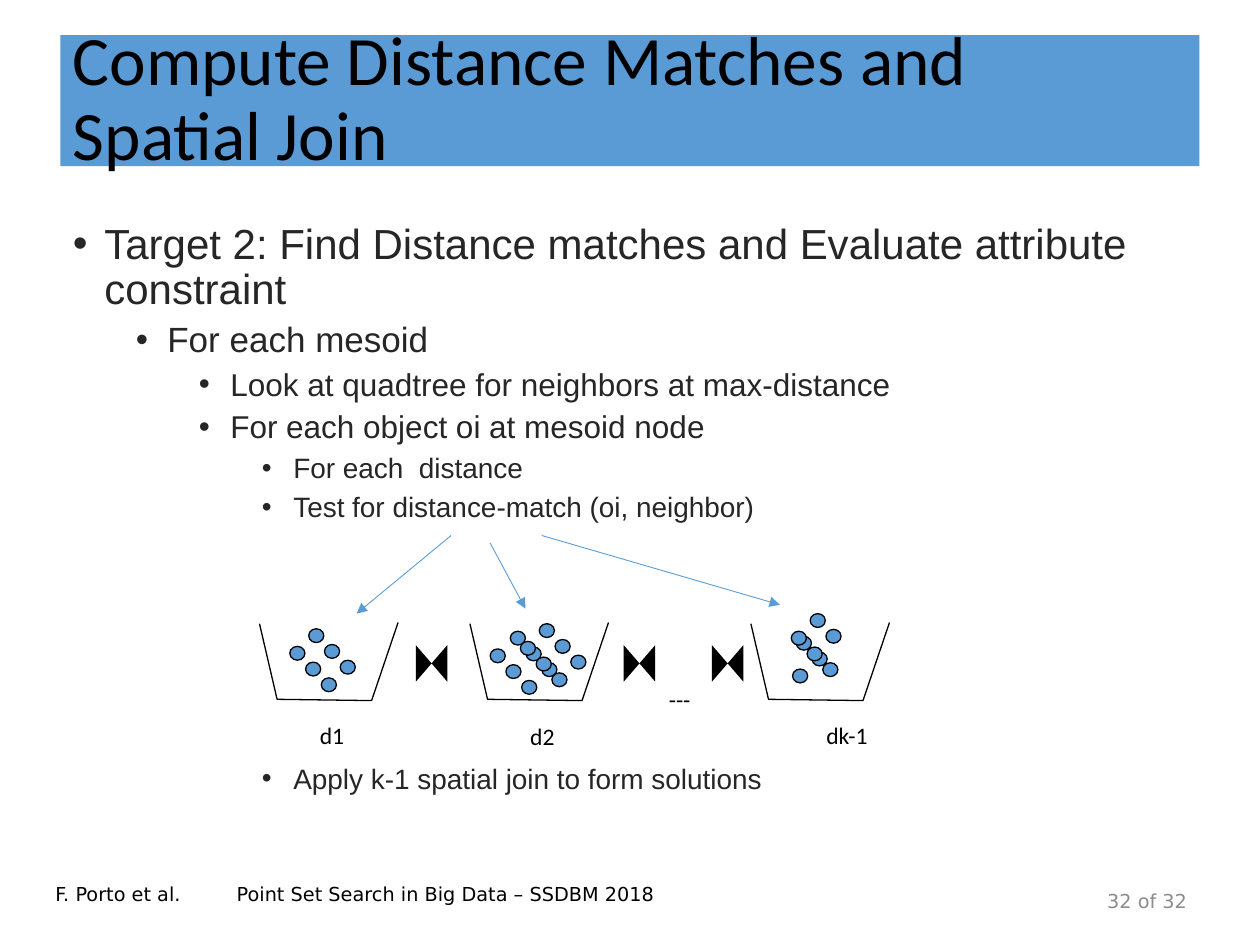
from dataclasses import dataclass

from lxml.etree import SubElement
from pptx import Presentation
from pptx.dml.color import RGBColor
from pptx.enum.shapes import MSO_CONNECTOR, MSO_SHAPE
from pptx.enum.text import MSO_ANCHOR, PP_ALIGN
from pptx.oxml.ns import qn
from pptx.util import Inches, Pt

CELL = 0.1  # inches; the slide is a grid of 100 columns by 75 rows


@dataclass(frozen=True)
class Theme:
    blue: RGBColor = RGBColor(0x5B, 0x9B, 0xD5)
    black: RGBColor = RGBColor(0, 0, 0)
    body: RGBColor = RGBColor(0x26, 0x26, 0x26)
    gray: RGBColor = RGBColor(0x8C, 0x8C, 0x8C)
    heading_font: str = "Calibri"
    body_font: str = "Arial"
    footer_font: str = "DejaVu Sans"
    title_size: float = 39.6
    level_sizes: tuple = (24, 20, 18, 16)
    label_size: float = 13.5
    footer_size: float = 11
    outline: float = 0.75
    arrow_line: float = 0.5


def grid(*cells):
    return [Inches(cell * CELL) for cell in cells]


class SlideBuilder:
    def __init__(self, presentation, theme):
        self.theme = theme
        self.slide = presentation.slides.add_slide(presentation.slide_layouts[6])
        self.shapes = self.slide.shapes

    def style_text(self, paragraph, size, font, color):
        paragraph.font.size = Pt(size)
        paragraph.font.name = font
        paragraph.font.color.rgb = color

    def preset(self, kind, box, fill, outlined=False):
        shape = self.shapes.add_shape(kind, *grid(*box))
        shape.shadow.inherit = False
        shape.fill.solid()
        shape.fill.fore_color.rgb = fill
        if outlined:
            shape.line.color.rgb = self.theme.black
            shape.line.width = Pt(self.theme.outline)
        else:
            shape.line.fill.background()
        return shape

    def title(self, text, box):
        frame = self.preset(MSO_SHAPE.RECTANGLE, box, self.theme.blue).text_frame
        frame.text = text
        frame.word_wrap = True
        frame.vertical_anchor = MSO_ANCHOR.MIDDLE
        paragraph = frame.paragraphs[0]
        paragraph.alignment = PP_ALIGN.LEFT
        paragraph.line_spacing = 0.9
        self.style_text(paragraph, self.theme.title_size,
                        self.theme.heading_font, self.theme.black)

    def bullets(self, items, box):
        """Add an outline from (level, space before in points, text) items."""
        frame = self.shapes.add_textbox(*grid(*box)).text_frame
        frame.word_wrap = True
        for index, (level, space, text) in enumerate(items):
            paragraph = frame.add_paragraph() if index else frame.paragraphs[0]
            paragraph.text = text
            paragraph.level = level
            paragraph.line_spacing = 0.9
            paragraph.space_before = Pt(space)
            self.style_text(paragraph, self.theme.level_sizes[level],
                            self.theme.body_font, self.theme.body)
            properties = paragraph._p.get_or_add_pPr()
            properties.set("marL", str(Inches(0.25 + 0.5 * level)))
            properties.set("indent", str(Inches(-0.25)))
            bullet_font = SubElement(properties, qn("a:buFont"))
            bullet_font.set("typeface", self.theme.body_font)
            SubElement(properties, qn("a:buChar")).set("char", "•")
            # the schema wants the default run properties after the bullet
            properties.append(properties.find(qn("a:defRPr")))

    def text(self, text, box, size, font, color, wrap=False,
             alignment=PP_ALIGN.LEFT, anchor=MSO_ANCHOR.TOP):
        frame = self.shapes.add_textbox(*grid(*box)).text_frame
        frame.text = text
        frame.word_wrap = wrap
        frame.vertical_anchor = anchor
        frame.paragraphs[0].alignment = alignment
        self.style_text(frame.paragraphs[0], size, font, color)

    def label(self, text, box):
        self.text(text, box, self.theme.label_size,
                  self.theme.heading_font, self.theme.black)

    def footer(self, text, box, color, **layout):
        self.text(text, box, self.theme.footer_size,
                  self.theme.footer_font, color, wrap=True, **layout)

    def bucket(self, left, top=49.4):
        outline = [(0, 0.1), (1.4, 6.1), (8.9, 6.2), (11, 0)]
        points = [grid(left + x, top + y) for x, y in outline]
        builder = self.shapes.build_freeform(*points[0])
        builder.add_line_segments(points[1:], close=False)
        shape = builder.convert_to_shape()
        shape.shadow.inherit = False
        shape.fill.background()
        shape.line.color.rgb = self.theme.black
        shape.line.width = Pt(self.theme.outline)

    def dots(self, left, top, count):
        """Add a run of dots that descends diagonally to the right."""
        for index in range(count):
            step = 1.25 * index
            self.preset(MSO_SHAPE.OVAL, (left + step, top + step, 1.2, 1.1),
                        self.theme.blue, outlined=True)

    def join_sign(self, left):
        shape = self.preset(MSO_SHAPE.FLOWCHART_COLLATE,
                            (left, 51.4, 2.9, 2.5), self.theme.black)
        shape.rotation = 90

    def arrow(self, start, end):
        connector = self.shapes.add_connector(
            MSO_CONNECTOR.STRAIGHT, *grid(*start, *end))
        connector.line.color.rgb = self.theme.blue
        connector.line.width = Pt(self.theme.arrow_line)
        SubElement(connector.line._get_or_add_ln(),
                   qn("a:tailEnd")).set("type", "triangle")
        SubElement(connector._element.spPr, qn("a:effectLst"))


OUTLINE = [
    (0, 10, "Target 2: Find Distance matches and Evaluate attribute constraint"),
    (1, 5, "For each mesoid"),
    (2, 5, "Look at quadtree for neighbors at max-distance"),
    (2, 5, "For each object oi at mesoid node"),
    (3, 5, "For each  distance"),
    (3, 5, "Test for distance-match (oi, neighbor)"),
    (3, 138, "Apply k-1 spatial join to form solutions"),  # leaves the diagram room
]
BUCKETS = [20.6, 37.3, 59.6]
DOT_RUNS = [
    (23, 51.3, 3), (24.5, 49.9, 3),
    (38.9, 51.5, 3), (40.5, 50.1, 3), (41.3, 50.9, 3), (42.8, 49.5, 3),
    (62.9, 53.1, 1), (63.2, 50.5, 2), (62.8, 50.1, 3), (64.3, 48.7, 2),
]
LABELS = [
    ("---", (52.1, 53.9, 3.8, 3.3)),
    ("d1", (24.4, 56.7, 4, 3.3)),
    ("d2", (41.1, 56.8, 4, 3.3)),
    ("dk-1", (64.6, 56.7, 5.4, 3.3)),
]
ARROWS = [
    ((35.8, 42.5), (28.3, 48.7)),
    ((38.9, 43.1), (41.7, 48.3)),
    ((43, 42.5), (61.9, 48)),
]
JOIN_SIGNS = [32.8, 49.3, 56.3]


def main():
    presentation = Presentation()
    presentation.slide_width, presentation.slide_height = grid(100, 75)
    theme = Theme()
    slide = SlideBuilder(presentation, theme)

    slide.title("Compute Distance Matches and \vSpatial Join", (4.8, 2.8, 90.4, 10.4))
    slide.bullets(OUTLINE, (4.8, 17.2, 90.4, 49.1))
    for left in BUCKETS:
        slide.bucket(left)
    for run in DOT_RUNS:
        slide.dots(*run)
    for text, box in LABELS:
        slide.label(text, box)
    for start, end in ARROWS:
        slide.arrow(start, end)
    for left in JOIN_SIGNS:
        slide.join_sign(left)

    slide.footer("F. Porto et al.", (3.4, 69.5, 13.2, 4), theme.black)
    slide.footer("Point Set Search in Big Data – SSDBM 2018",
                 (17.8, 69.5, 64.5, 4), theme.black)
    slide.footer("32 of 32", (83.4, 69.5, 11.8, 4), theme.gray,
                 alignment=PP_ALIGN.RIGHT, anchor=MSO_ANCHOR.MIDDLE)
    presentation.save("out.pptx")


if __name__ == "__main__":
    main()
